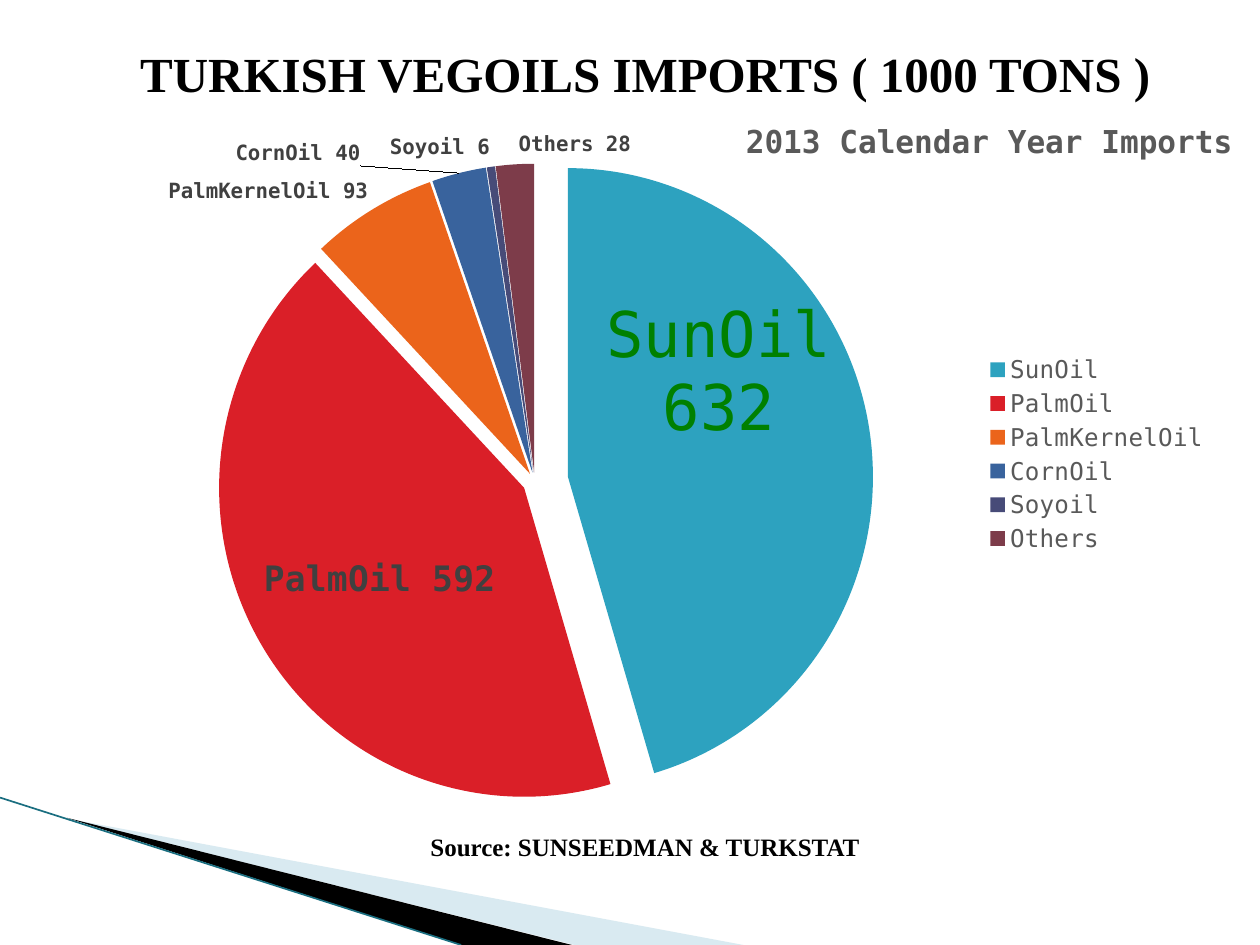
from lxml import etree
from pptx import Presentation
from pptx.chart.data import CategoryChartData
from pptx.dml.color import RGBColor
from pptx.enum.chart import XL_CHART_TYPE, XL_LABEL_POSITION, XL_LEGEND_POSITION
from pptx.enum.shapes import MSO_CONNECTOR
from pptx.enum.text import MSO_ANCHOR, PP_ALIGN
from pptx.oxml.ns import qn
from pptx.util import Inches, Pt

PIE = XL_CHART_TYPE.PIE_EXPLODED
LEGEND_RIGHT = XL_LEGEND_POSITION.RIGHT
INSIDE, OUTSIDE = XL_LABEL_POSITION.CENTER, XL_LABEL_POSITION.OUTSIDE_END
STRAIGHT = MSO_CONNECTOR.STRAIGHT
CENTER, MIDDLE = PP_ALIGN.CENTER, MSO_ANCHOR.MIDDLE

WIDTH, HEIGHT = 10, 7.5
SERIF, MONO = "Times New Roman", "DejaVu Sans Mono"
COLORS = {
    "black": "000000", "pale": "A0CBDC", "teal": "1A6E80",
    "green": "008000", "grey": "595959", "label": "404040",
}
# name, value, slice colour, explosion in percent
OILS = [
    ("SunOil", 632, "2DA2BF", 11),
    ("PalmOil", 592, "DA1F28", 4),
    ("PalmKernelOil", 93, "EB641B", 3),
    ("CornOil", 40, "39639D", 3),
    ("Soyoil", 6, "474B78", 3),
    ("Others", 28, "7D3C4A", 3),
]
BASE_EXPLOSION = 3
# position, size, colour, bold, separator, shift as shares of the chart
LABELS = [
    (INSIDE, 36, "green", False, "\n", (0, -0.12)),
    (INSIDE, 20, "label", True, " ", (-0.01, 0.02)),
    (OUTSIDE, 12, "label", True, " ", None),
    (OUTSIDE, 12, "label", True, " ", (-0.08, 0)),
    (OUTSIDE, 12, "label", True, " ", None),
    (OUTSIDE, 12, "label", True, " ", (0.05, 0)),
]


def rgb(name):
    return RGBColor.from_string(COLORS.get(name, name))


def style_font(font, size, color, name=MONO, bold=False):
    font.size, font.name, font.bold = Pt(size), name, bold
    font.color.rgb = rgb(color)


def write_text(box, text, size, color, name, bold=True):
    """Fill a shape with one centred line."""
    frame = box.text_frame
    frame.word_wrap, frame.vertical_anchor = True, MIDDLE
    para = frame.paragraphs[0]
    para.alignment = CENTER
    span = para.add_run()
    span.text = text
    style_font(span.font, size, color, name, bold)


def add_text(slide, place, text, **form):
    box = slide.shapes.add_textbox(*map(Inches, place))
    write_text(box, text, **form)


def add_wedge(slide, points, color, opacity=100):
    corners = [(Inches(x), Inches(y)) for x, y in points]
    builder = slide.shapes.build_freeform(*corners[0])
    builder.add_line_segments(corners[1:], close=True)
    wedge = builder.convert_to_shape()
    wedge.shadow.inherit = False
    wedge.fill.solid()
    wedge.fill.fore_color.rgb = rgb(color)
    wedge.line.fill.background()
    if opacity < 100:
        tone = wedge.fill._xPr.find(".//" + qn("a:srgbClr"))
        etree.SubElement(tone, qn("a:alpha"), val=str(opacity * 1000))


def add_line(slide, start, end, color, width):
    line = slide.shapes.add_connector(STRAIGHT, *map(Inches, start + end))
    line.line.color.rgb = rgb(color)
    line.line.width = Pt(width)
    etree.SubElement(line._element.spPr, qn("a:effectLst"))


def make_value(tag, value):
    element = etree.Element(qn(tag))
    element.set("val", str(value))
    return element


def make_separator(text):
    separator = etree.Element(qn("c:separator"))
    separator.text = text
    return separator


def set_layout(parent, after, shares, absolute=True, inner=False):
    """Place a chart part by shares of the chart, behind the child named after."""
    for old in parent.findall(qn("c:layout")):
        parent.remove(old)
    layout = etree.Element(qn("c:layout"))
    manual = etree.SubElement(layout, qn("c:manualLayout"))
    if inner:
        manual.append(make_value("c:layoutTarget", "inner"))
    if absolute:
        manual.append(make_value("c:xMode", "edge"))
        manual.append(make_value("c:yMode", "edge"))
    for key, share in zip("xywh", shares):
        manual.append(make_value("c:" + key, share))
    if after:
        parent.find(qn(after)).addnext(layout)
    else:
        parent.insert(0, layout)


def style_slices(series):
    for index, (_, _, color, explosion) in enumerate(OILS):
        fill = series.points[index].format.fill
        fill.solid()
        fill.fore_color.rgb = rgb(color)
        point = series._element.findall(qn("c:dPt"))[index]
        for old in point.findall(qn("c:explosion")):
            point.remove(old)
        point.find(qn("c:spPr")).addprevious(make_value("c:explosion", explosion))
    for old in series._element.findall(qn("c:explosion")):
        series._element.remove(old)
    first = series._element.find(qn("c:dPt"))
    first.addprevious(make_value("c:explosion", BASE_EXPLOSION))


def style_labels(series):
    labels = series.data_labels
    labels.show_value = labels.show_category_name = True
    style_font(labels.font, 12, "label", bold=True)
    group = labels._element
    group.find(qn("c:showBubbleSize")).addnext(make_separator(" "))
    for index, (position, size, color, bold, gap, shift) in enumerate(LABELS):
        label = series.points[index].data_label
        style_font(label.font, size, color, bold=bold)
        label.position = position
        element = group.findall(qn("c:dLbl"))[index]
        element.find(qn("c:showCatName")).set("val", "1")
        element.find(qn("c:showBubbleSize")).addnext(make_separator(gap))
        if shift:
            set_layout(element, "c:idx", shift, absolute=False)


def add_import_chart(slide, place):
    data = CategoryChartData()
    data.categories = [oil[0] for oil in OILS]
    data.add_series("Series 1", [oil[1] for oil in OILS])
    chart = slide.shapes.add_chart(PIE, *map(Inches, place), data).chart
    style_font(chart.font, 10, "black")
    chart.has_title = True
    span = chart.chart_title.text_frame.paragraphs[0].add_run()
    span.text = "2013 Calendar Year Imports"
    style_font(span.font, 18, "grey", bold=True)
    chart.chart_title.include_in_layout = False
    set_layout(chart.chart_title._element, "c:tx", (0.6, 0.01))
    chart.has_legend = True
    chart.legend.position = LEGEND_RIGHT
    chart.legend.include_in_layout = False
    style_font(chart.legend.font, 14, "grey")
    set_layout(chart.legend._element, "c:legendPos", (0.8, 0.35, 0.19, 0.3))
    plot = chart.plots[0]
    plot.vary_by_categories = True
    area = plot._element.getparent()
    set_layout(area, None, (0.17, 0.08, 0.52, 0.92), inner=True)
    style_slices(plot.series[0])
    style_labels(plot.series[0])


def main():
    deck = Presentation()
    deck.slide_width, deck.slide_height = Inches(WIDTH), Inches(HEIGHT)
    slide = deck.slides.add_slide(deck.slide_layouts[5])
    add_wedge(slide, [(0.55, 6.5), (5.9, HEIGHT), (4.56, HEIGHT)], "pale", 40)
    add_wedge(slide, [(0.53, 6.49), (4.54, HEIGHT), (3.66, HEIGHT)], "black")
    add_line(slide, (0, 6.33), (3.66, HEIGHT), "teal", 0.95)
    title = slide.shapes.title
    title.left, title.top, title.width, title.height = map(
        Inches, (0.59, 0.29, 9.06, 0.57))
    write_text(title, "TURKISH VEGOILS IMPORTS ( 1000 TONS )",
               size=28, color="black", name=SERIF)
    add_import_chart(slide, (0.12, 0.86, 9.71, 5.49))
    add_text(slide, (3.27, 6.53, 3.7, 0.38), "Source: SUNSEEDMAN & TURKSTAT",
             size=14.3, color="black", name=SERIF)
    deck.save("out.pptx")


if __name__ == "__main__":
    main()
